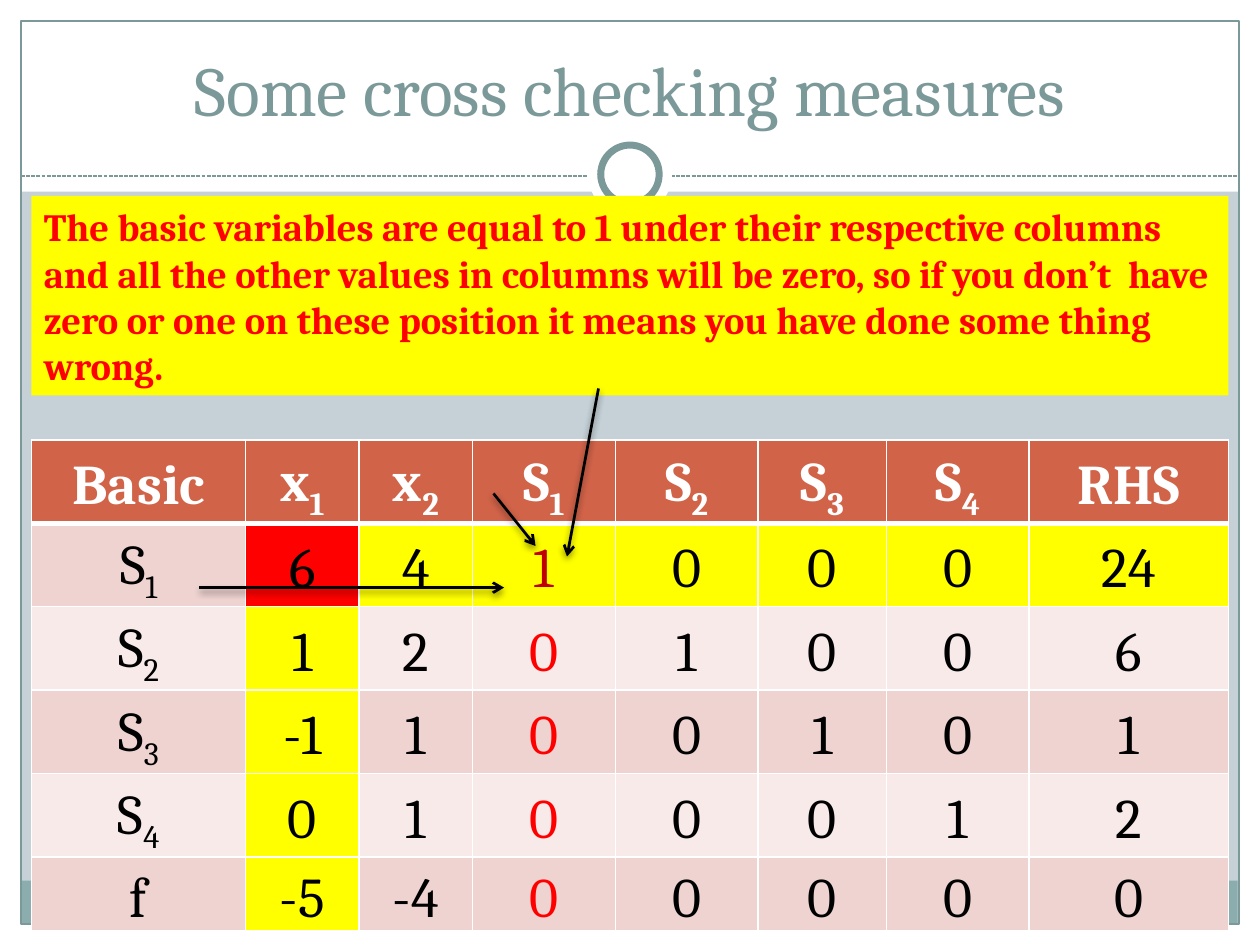
from lxml import etree
from pptx import Presentation
from pptx.dml.color import RGBColor
from pptx.enum.dml import MSO_LINE
from pptx.enum.shapes import MSO_CONNECTOR, MSO_SHAPE
from pptx.enum.text import MSO_ANCHOR, PP_ALIGN
from pptx.oxml import parse_xml
from pptx.oxml.ns import nsdecls, qn
from pptx.util import Pt

RECTANGLE = MSO_SHAPE.RECTANGLE
OVAL = MSO_SHAPE.OVAL
STRAIGHT = MSO_CONNECTOR.STRAIGHT
SQUARE_DASH = MSO_LINE.SQUARE_DOT
CENTER = PP_ALIGN.CENTER
LEFT = PP_ALIGN.LEFT
MIDDLE = MSO_ANCHOR.MIDDLE
BOTTOM = MSO_ANCHOR.BOTTOM

FONT = "Cambria"
WHITE, BLACK, RED, YELLOW = "FFFFFF", "000000", "FF0000", "FFFF00"
DARK_RED, TEAL, GRAY_TEAL = "C00000", "8CADAE", "7C999A"
HEADER_FILL = "D16349"
BAND_FILLS = ("F7EAE9", "EED3D0")
TITLE_ONLY = 5

COLUMN_WIDTHS = (122.4, 64.8, 64.8, 81.6, 81.6, 73.4, 81.6, 113.8)
ROW_HEIGHT = 29.5
PIVOT_COLUMN, PIVOT_ROW, CHECKED_COLUMN = 1, 1, 3
TABLEAU = (
    ("Basic", "x_1", "x_2", "S_1", "S_2", "S_3", "S_4", "RHS"),
    ("S_1", "6", "4", "1", "0", "0", "0", "24"),
    ("S_2", "1", "2", "0", "1", "0", "0", "6"),
    ("S_3", "-1", "1", "0", "0", "1", "0", "1"),
    ("S_4", "0", "1", "0", "0", "0", "1", "2"),
    ("f", "-5", "-4", "0", "0", "0", "0", "0"),
)
NOTICE = (
    "The basic variables are equal to 1 under their respective columns and all "
    "the other values in columns will be zero, so if you don’t  have zero or one "
    "on these position it means you have done some thing wrong."
)
ARROWS = (
    (342, 222, 324, 318),
    (114, 335.8, 288, 335.8),
    (282, 282, 306, 312),
)
SHADOW = (
    f'<a:effectLst {nsdecls("a")}><a:outerShdw blurRad="50800" dist="25400" '
    'dir="5400000" rotWithShape="0"><a:srgbClr val="000000"><a:alpha val="45000"/>'
    "</a:srgbClr></a:outerShdw></a:effectLst>"
)


def color(hex_value):
    return RGBColor.from_string(hex_value)


def format_run(run, size, hex_value, bold=False):
    run.font.name = FONT
    run.font.size = Pt(size)
    run.font.bold = bold
    run.font.color.rgb = color(hex_value)


def add_block(slide, kind, box, fill=None, line=None, line_width=0.75):
    shape = slide.shapes.add_shape(kind, *map(Pt, box))
    shape.shadow.inherit = False
    if fill:
        shape.fill.solid()
        shape.fill.fore_color.rgb = color(fill)
    else:
        shape.fill.background()
    if line:
        shape.line.color.rgb = color(line)
        shape.line.width = Pt(line_width)
    else:
        shape.line.fill.background()
    return shape


def add_line(slide, ends, hex_value, width):
    connector = slide.shapes.add_connector(STRAIGHT, *map(Pt, ends))
    connector.line.color.rgb = color(hex_value)
    connector.line.width = Pt(width)
    return connector


def add_frame(slide):
    bands = ((0, 528, 720, 12), (0, 0, 720, 109.5), (0, 0, 12, 540), (708, 0, 12, 540))
    for band in bands:
        add_block(slide, RECTANGLE, band, WHITE)
    add_block(slide, RECTANGLE, (11.8, 503.3, 695.5, 24.5), TEAL)
    add_block(slide, RECTANGLE, (12, 12, 696, 516), line=GRAY_TEAL)
    divider = add_line(slide, (12, 100.6, 708, 100.6), GRAY_TEAL, 0.75)
    divider.line.dash_style = SQUARE_DASH
    etree.SubElement(divider.element.spPr, qn("a:effectLst"))
    add_block(slide, OVAL, (336, 75.6, 48, 48), WHITE)
    add_block(slide, OVAL, (343.3, 82.9, 33.4, 33.4), WHITE, GRAY_TEAL, 4)


def set_title(slide, text):
    title = slide.shapes.title
    title.left, title.top, title.width, title.height = map(Pt, (24, 18, 672, 60))
    text_frame = title.text_frame
    text_frame.text = text
    text_frame.vertical_anchor = BOTTOM
    paragraph = text_frame.paragraphs[0]
    paragraph.alignment = CENTER
    format_run(paragraph.runs[0], 40, GRAY_TEAL)
    title.element.getparent().append(title.element)


def set_borders(cell, row):
    properties = cell._tc.get_or_add_tcPr()
    top = 3 if row == 1 else 1
    bottom = 3 if row == 0 else 1
    for side, width in (("L", 1), ("R", 1), ("T", top), ("B", bottom)):
        border = etree.SubElement(properties, qn(f"a:ln{side}"), w=str(Pt(width)))
        fill = etree.SubElement(border, qn("a:solidFill"))
        etree.SubElement(fill, qn("a:srgbClr"), val=WHITE)


def cell_colors(row, column):
    if row == 0:
        return HEADER_FILL, WHITE
    fill = BAND_FILLS[row % 2]
    if (row, column) == (PIVOT_ROW, PIVOT_COLUMN):
        fill = RED
    elif column == PIVOT_COLUMN or (row == PIVOT_ROW and column > 0):
        fill = YELLOW
    text_color = BLACK
    if column == CHECKED_COLUMN:
        text_color = DARK_RED if row == PIVOT_ROW else RED
    return fill, text_color


def fill_cell(cell, row, column, label):
    fill, text_color = cell_colors(row, column)
    set_borders(cell, row)
    cell.fill.solid()
    cell.fill.fore_color.rgb = color(fill)
    cell.vertical_anchor = MIDDLE
    cell.margin_left = cell.margin_right = Pt(5)
    cell.margin_top = cell.margin_bottom = Pt(0)
    paragraph = cell.text_frame.paragraphs[0]
    paragraph.alignment = CENTER
    paragraph.line_spacing = 1.15
    base, _, subscript = label.partition("_")
    paragraph.text = base
    if subscript:
        run = paragraph.add_run()
        run.text = subscript
        run._r.get_or_add_rPr().set("baseline", "-25000")
    for run in paragraph.runs:
        format_run(run, 32, text_color, bold=row == 0)


def add_tableau(slide):
    box = (18, 251.3, sum(COLUMN_WIDTHS), ROW_HEIGHT * len(TABLEAU))
    frame = slide.shapes.add_table(len(TABLEAU), len(COLUMN_WIDTHS), *map(Pt, box))
    table = frame.table
    table.first_row = table.horz_banding = False
    for column, width in zip(table.columns, COLUMN_WIDTHS):
        column.width = Pt(width)
    for row, labels in enumerate(TABLEAU):
        table.rows[row].height = Pt(ROW_HEIGHT)
        for column, label in enumerate(labels):
            fill_cell(table.cell(row, column), row, column, label)


def add_notice(slide):
    shape = add_block(slide, RECTANGLE, (18, 112, 684, 114), YELLOW)
    text_frame = shape.text_frame
    text_frame.word_wrap = True
    text_frame.text = NOTICE
    paragraph = text_frame.paragraphs[0]
    paragraph.alignment = LEFT
    format_run(paragraph.runs[0], 22, RED, bold=True)


def add_arrow(slide, ends):
    arrow = add_line(slide, ends, BLACK, 1.57)
    etree.SubElement(arrow.line._get_or_add_ln(), qn("a:tailEnd"), type="arrow")
    arrow.element.spPr.append(parse_xml(SHADOW))


def main():
    presentation = Presentation()
    presentation.slide_width, presentation.slide_height = Pt(720), Pt(540)
    slide = presentation.slides.add_slide(presentation.slide_layouts[TITLE_ONLY])
    slide.background.fill.solid()
    slide.background.fill.fore_color.rgb = color("C5D1D7")
    add_frame(slide)
    set_title(slide, "Some cross checking measures")
    add_tableau(slide)
    add_notice(slide)
    for ends in ARROWS:
        add_arrow(slide, ends)
    presentation.save("out.pptx")


if __name__ == "__main__":
    main()
